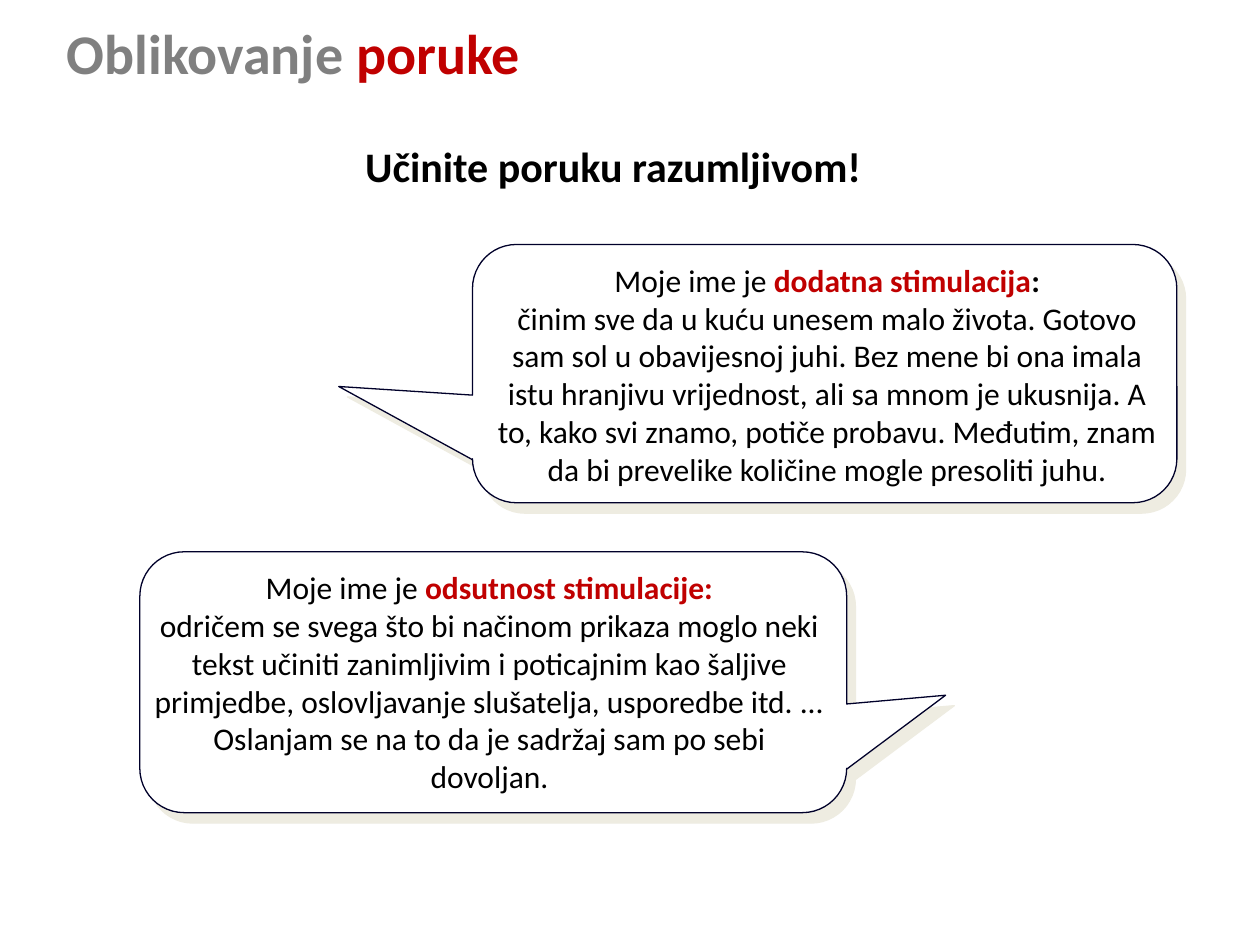
"""Builds a slide on shaping a message, with two speech bubbles."""
import pptx
import pptx.dml.color
import pptx.enum.shapes
import pptx.enum.text
import pptx.oxml
import pptx.oxml.ns
import pptx.util
from pptx.util import Inches

COLORS = {"gray": "808080", "red": "C00000", "black": "000000",
          "white": "FFFFFF", "outline": "00002A", "shadow": "EEECE1"}
FONT = "Calibri"
ALIGN = pptx.enum.text.PP_ALIGN

TITLE = [[("Oblikovanje ", "gray", True), ("poruke", "red", True)]]
SUBTITLE = [[("Učinite poruku razumljivom!", "black", True)]]
BUBBLES = [
    {"box": (1.11, 4.38, 5.61, 2.07), "tail": (0.64, 0.05, 0.17),
     "text_box": (1.11, 4.46, 5.55, 1.92),
     "text": [
         [("Moje ime je ", "black", False), ("odsutnost stimulacije:", "red", True)],
         [("odričem se svega što bi načinom prikaza moglo neki tekst učiniti "
           "zanimljivim i poticajnim kao šaljive primjedbe, oslovljavanje "
           "slušatelja, usporedbe itd. ... Oslanjam se na to da je sadržaj "
           "sam po sebi dovoljan.", "black", False)]]},
    {"box": (3.75, 1.94, 5.59, 2.05), "tail": (-0.69, 0.05, 0.17),
     "text_box": (3.79, 2.02, 5.55, 1.92),
     "text": [
         [("Moje ime je ", "black", False), ("dodatna stimulacija", "red", True),
          (":", "black", True)],
         [("činim sve da u kuću unesem malo života. Gotovo sam sol u obavijesnoj "
           "juhi. Bez mene bi ona imala istu hranjivu vrijednost, ali sa mnom je "
           "ukusnija. A to, kako svi znamo, potiče probavu. Međutim, znam da bi "
           "prevelike količine mogle presoliti juhu.", "black", False)]]},
]


def rgb(name):
    return pptx.dml.color.RGBColor.from_string(COLORS[name])


def write(text_frame, paragraphs, size, alignment):
    text_frame.word_wrap = True
    for index, runs in enumerate(paragraphs):
        paragraph = text_frame.paragraphs[0] if index == 0 else text_frame.add_paragraph()
        paragraph.alignment = alignment
        for text, color, bold in runs:
            run = paragraph.add_run()
            run.text = text
            run.font.name = FONT
            run.font.size = pptx.util.Pt(size)
            run.font.bold = bold
            run.font.color.rgb = rgb(color)


def add_text(slide, box, paragraphs, size, alignment):
    text_frame = slide.shapes.add_textbox(*map(Inches, box)).text_frame
    write(text_frame, paragraphs, size, alignment)
    text_frame.auto_size = pptx.enum.text.MSO_AUTO_SIZE.SHAPE_TO_FIT_TEXT


def add_bubble(slide, box, tail):
    shape = slide.shapes.add_shape(
        pptx.enum.shapes.MSO_SHAPE.ROUNDED_RECTANGULAR_CALLOUT, *map(Inches, box))
    for index, value in enumerate(tail):
        shape.adjustments[index] = value
    shape.fill.solid()
    shape.fill.fore_color.rgb = rgb("white")
    shape.line.color.rgb = rgb("outline")
    shape.line.width = pptx.util.Pt(0.75)
    shape.shadow.inherit = False
    effects = shape.element.spPr.find(pptx.oxml.ns.qn("a:effectLst"))
    effects.append(pptx.oxml.parse_xml(
        f'<a:outerShdw {pptx.oxml.ns.nsdecls("a")} blurRad="0" '
        f'dist="{pptx.util.Pt(7.8)}" dir="{50 * 60000}" algn="ctr" rotWithShape="0">'
        f'<a:srgbClr val="{COLORS["shadow"]}"/></a:outerShdw>'))


def main():
    presentation = pptx.Presentation()
    presentation.slide_width, presentation.slide_height = Inches(10), Inches(7.5)
    slide = presentation.slides.add_slide(presentation.slide_layouts[5])

    for bubble in BUBBLES:
        add_bubble(slide, bubble["box"], bubble["tail"])

    title = slide.shapes.title
    title.left, title.top, title.width, title.height = map(Inches, (0.43, 0.05, 7.97, 0.72))
    write(title.text_frame, TITLE, 32, ALIGN.LEFT)
    title.text_frame.auto_size = pptx.enum.text.MSO_AUTO_SIZE.NONE
    title.text_frame.vertical_anchor = pptx.enum.text.MSO_ANCHOR.MIDDLE

    add_text(slide, (2.8, 1.07, 4.87, 0.5), SUBTITLE, 24, ALIGN.LEFT)
    for bubble in BUBBLES:
        add_text(slide, bubble["text_box"], bubble["text"], 18, ALIGN.CENTER)

    presentation.save("out.pptx")


if __name__ == "__main__":
    main()
